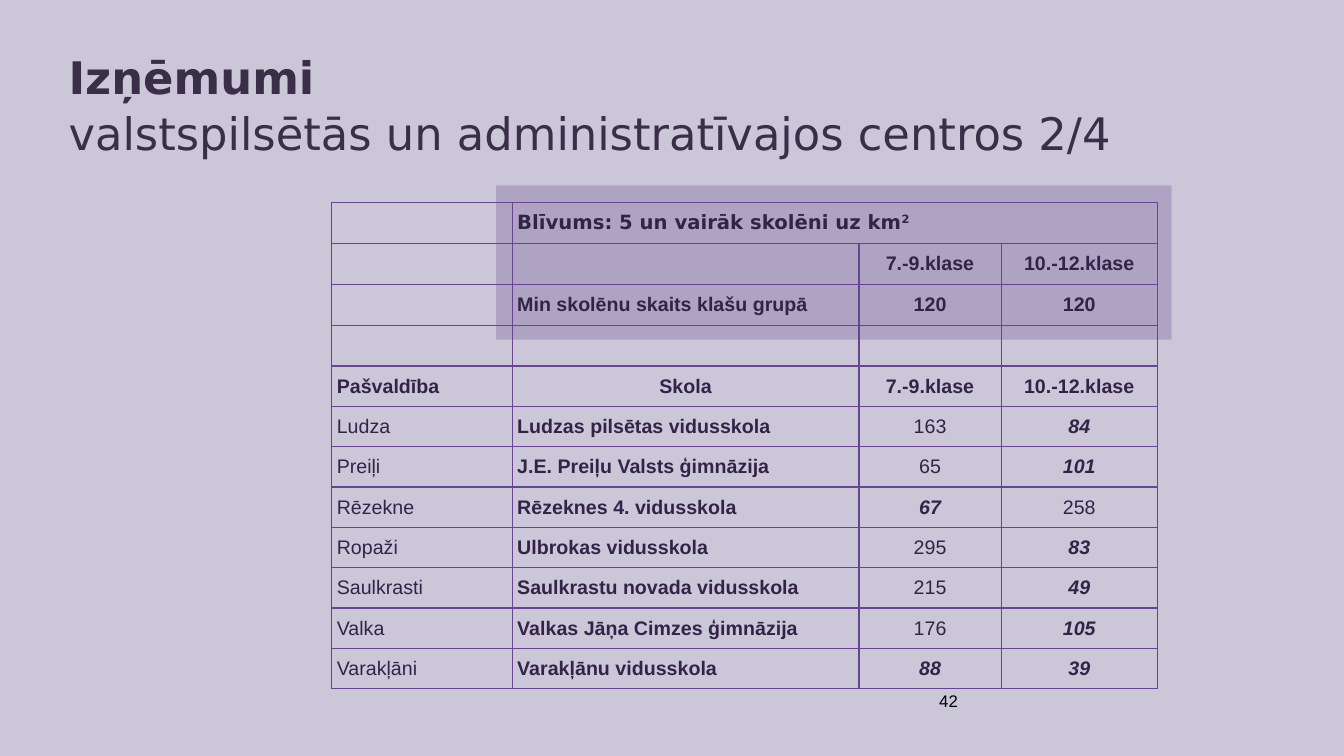
"""Build the slide on exceptions to minimum pupil numbers in cities and administrative centres."""
import lxml.etree
import pptx
import pptx.dml.color
import pptx.enum.shapes
import pptx.enum.text
import pptx.oxml.ns
import pptx.util

Inches = pptx.util.Inches
Pt = pptx.util.Pt
ALIGN = pptx.enum.text.PP_ALIGN
ANCHOR = pptx.enum.text.MSO_ANCHOR
qn = pptx.oxml.ns.qn

COLORS = {"background": "CBC7D8", "purple": "664690", "title": "3A2E49",
          "cell": "332348", "number": "000000"}
HEAD, BODY = "DejaVu Sans", "Arial"
CLASSES = ["7.-9.klase", "10.-12.klase"]
HEADER = [
    ["", "Blīvums: 5 un vairāk skolēni uz km", "", ""],
    ["", ""] + CLASSES,
    ["", "Min skolēnu skaits klašu grupā", "120", "120"],
    ["", "", "", ""],
    ["Pašvaldība", "Skola"] + CLASSES,
]
SCHOOLS = [
    ["Ludza", "Ludzas pilsētas vidusskola", "163", "84"],
    ["Preiļi", "J.E. Preiļu Valsts ģimnāzija", "65", "101"],
    ["Rēzekne", "Rēzeknes 4. vidusskola", "67", "258"],
    ["Ropaži", "Ulbrokas vidusskola", "295", "83"],
    ["Saulkrasti", "Saulkrastu novada vidusskola", "215", "49"],
    ["Valka", "Valkas Jāņa Cimzes ģimnāzija", "176", "105"],
    ["Varakļāni", "Varakļānu vidusskola", "88", "39"],
]
EXCEPTIONS = {"84", "101", "67", "83", "49", "105", "88", "39"}


class SlideBuilder:
    """Hold the style and the current slide."""

    def __init__(self, s):
        self.s = s
        fill = s.background.fill
        fill.solid()
        fill.fore_color.rgb = self.rgb("background")

    def rgb(self, name):
        return pptx.dml.color.RGBColor.from_string(COLORS[name])

    def format_run(self, r, size, color, font, bold=False, italic=False):
        r.font.size = Pt(size)
        r.font.name = font
        r.font.color.rgb = self.rgb(color)
        r.font.bold = bold
        r.font.italic = italic

    def rectangle(self, box, color, opacity):
        sp = self.s.shapes.add_shape(pptx.enum.shapes.MSO_SHAPE.RECTANGLE, *map(Inches, box))
        sp.shadow.inherit = False
        sp.fill.solid()
        sp.fill.fore_color.rgb = self.rgb(color)
        sp.line.fill.background()
        clr = sp.fill._xPr.find(".//" + qn("a:srgbClr"))
        lxml.etree.SubElement(clr, qn("a:alpha"), val=str(opacity * 1000))

    def text(self, box, lines, size, color, font, align=ALIGN.LEFT,
             anchor=ANCHOR.TOP, spacing=1.0):
        tf = self.s.shapes.add_textbox(*map(Inches, box)).text_frame
        tf.word_wrap = True
        tf.vertical_anchor = anchor
        tf.margin_left = tf.margin_right = tf.margin_top = tf.margin_bottom = Inches(0.05)
        tf.text = "\n".join(line for line, bold in lines)
        for p, (line, bold) in zip(tf.paragraphs, lines):
            p.alignment = align
            p.line_spacing = spacing
            self.format_run(p.runs[0], size, color, font, bold)

    def borders(self, cell):
        tcPr = cell._tc.get_or_add_tcPr()
        for i, side in enumerate(("lnL", "lnR", "lnT", "lnB")):
            ln = lxml.etree.Element(qn("a:" + side), w=str(Pt(1)))
            fill = lxml.etree.SubElement(ln, qn("a:solidFill"))
            lxml.etree.SubElement(fill, qn("a:srgbClr"), val=COLORS["purple"])
            tcPr.insert(i, ln)

    def cell(self, cell, value, font, bold, italic, align):
        cell.margin_left = cell.margin_right = Inches(0.05)
        cell.margin_top = cell.margin_bottom = Inches(0.05)
        cell.vertical_anchor = ANCHOR.MIDDLE
        cell.fill.background()
        self.borders(cell)
        if value:
            cell.text_frame.text = value
            p = cell.text_frame.paragraphs[0]
            p.alignment = align
            self.format_run(p.runs[0], 14, "cell", font, bold, italic)

    def table(self, left, top, widths, row_height):
        rows = HEADER + SCHOOLS
        frame = self.s.shapes.add_table(len(rows), len(widths), Inches(left), Inches(top),
                                        Inches(sum(widths)), Inches(row_height * len(rows)))
        tbl = frame.table
        tbl.first_row = tbl.horz_banding = False
        for column, width in zip(tbl.columns, widths):
            column.width = Inches(width)
        for i, row in enumerate(rows):
            tbl.rows[i].height = Inches(row_height)
            for j, value in enumerate(row):
                italic = value in EXCEPTIONS
                bold = i < len(HEADER) or j == 1 or italic
                centred = j > 1 or value == "Skola"
                self.cell(tbl.cell(i, j), value, BODY if i else HEAD, bold, italic,
                          ALIGN.CENTER if centred else ALIGN.LEFT)
        density = tbl.cell(0, 1)
        density.merge(tbl.cell(0, 3))
        r = density.text_frame.paragraphs[0].add_run()
        r.text = "2"
        self.format_run(r, 14, "cell", HEAD, True)
        r.font._element.set("baseline", "30000")


def main():
    prs = pptx.Presentation()
    prs.slide_width, prs.slide_height = Inches(13.33), Inches(7.5)
    slide = SlideBuilder(prs.slides.add_slide(prs.slide_layouts[6]))
    slide.rectangle((4.92, 1.84, 6.7, 1.53), "purple", 28)
    slide.table(3.29, 2.01, [1.79, 3.44, 1.41, 1.55], 0.4)
    slide.text((0.63, 0.42, 12.18, 1.18),
               [("Izņēmumi", True), ("valstspilsētās un administratīvajos centros 2/4", False)],
               32, "title", HEAD, spacing=1.04)
    slide.text((6.44, 6.75, 3.11, 0.4), [("42", False)], 12, "number", BODY,
               ALIGN.RIGHT, ANCHOR.MIDDLE)
    prs.save("out.pptx")


if __name__ == "__main__":
    main()
